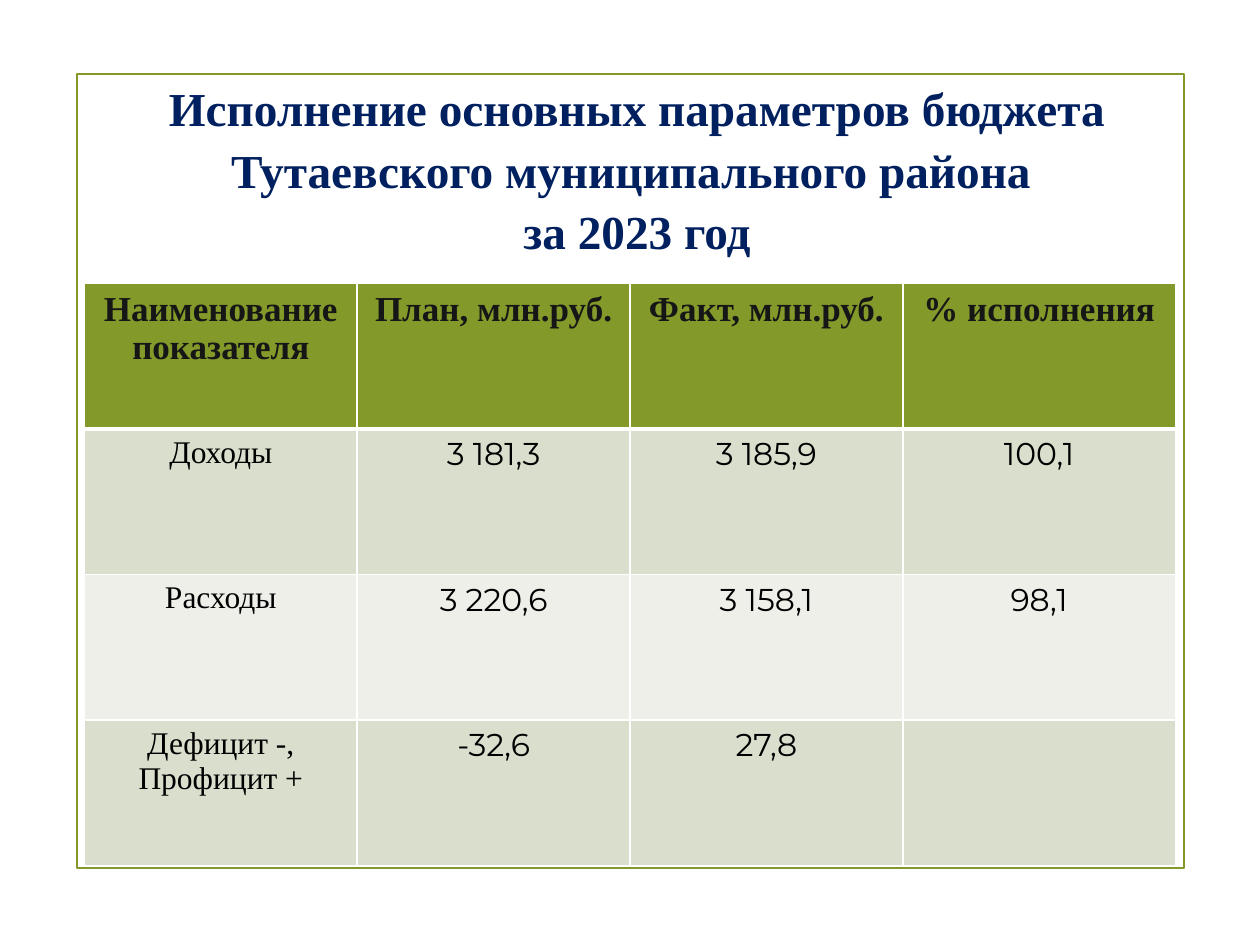
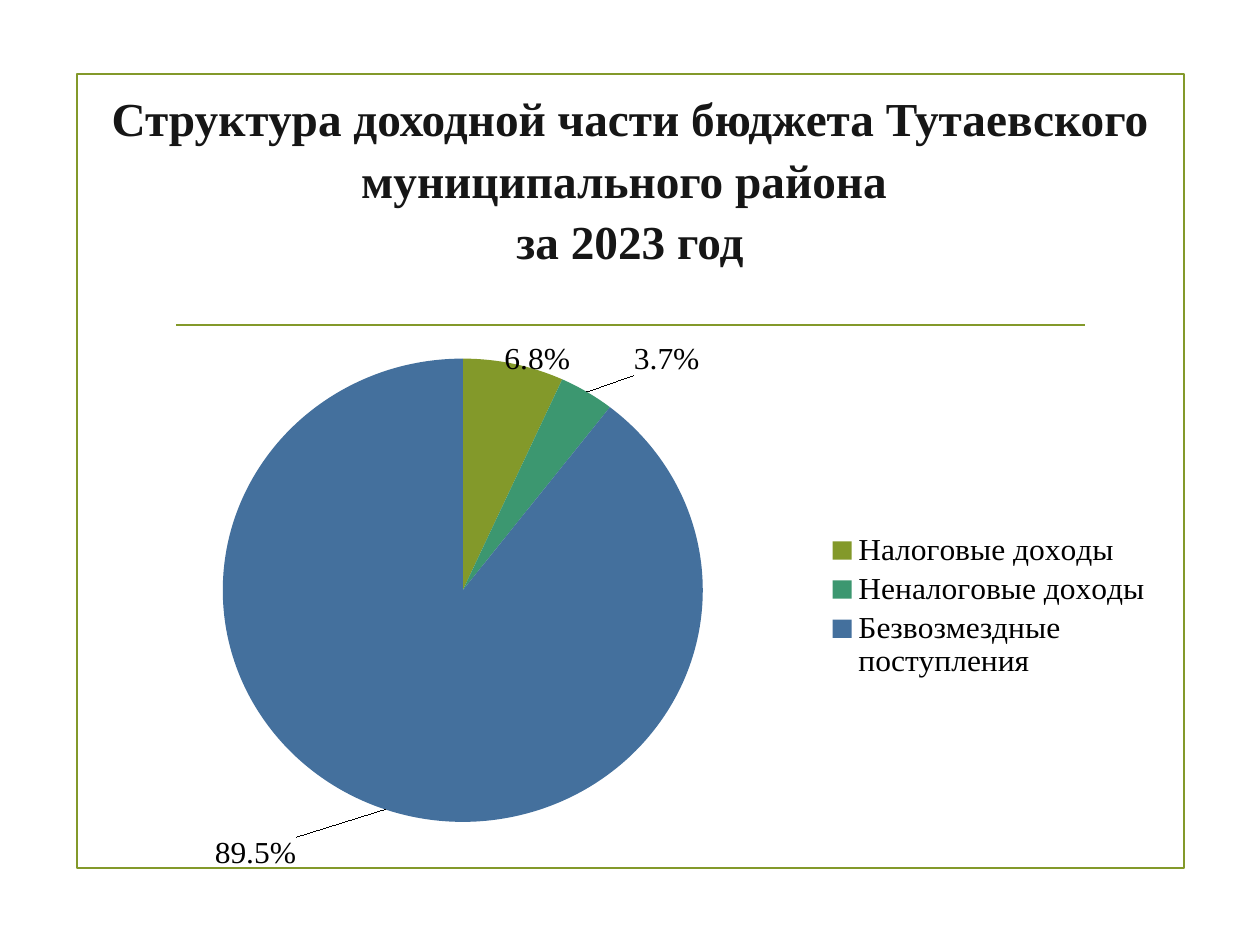
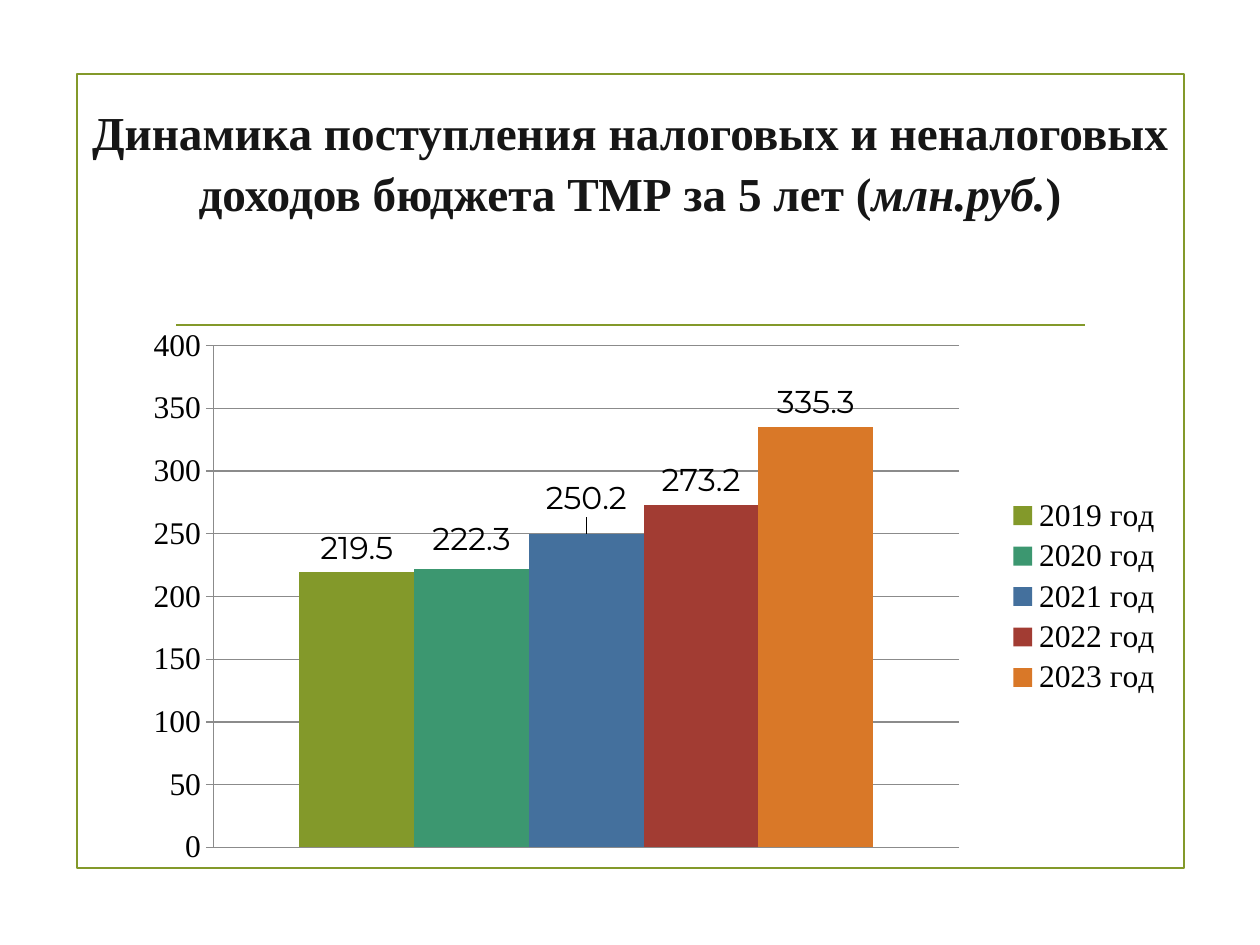
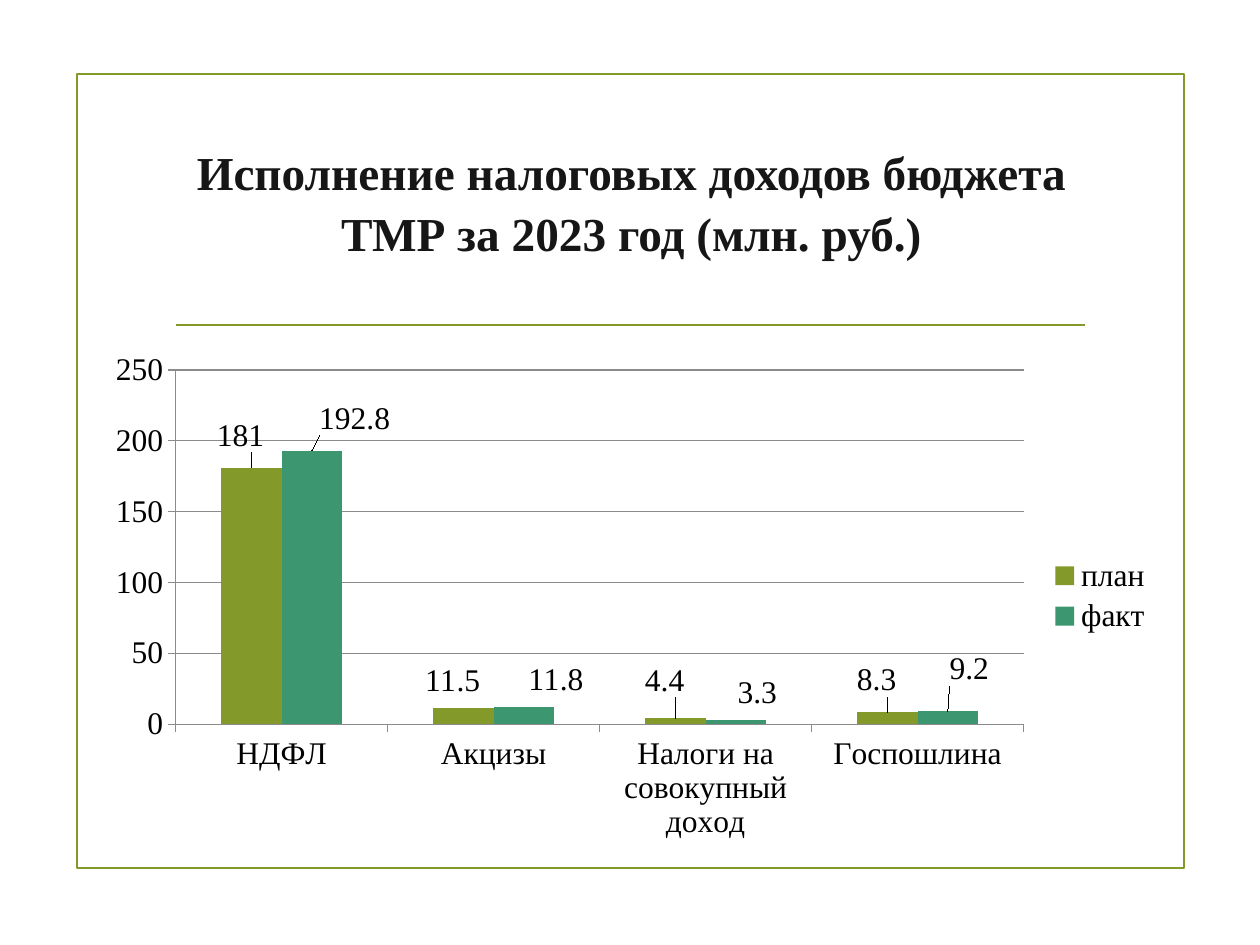
import lxml.etree
import pptx
import pptx.chart.data
import pptx.dml.color
import pptx.enum.chart
import pptx.enum.shapes
import pptx.enum.text
import pptx.oxml.ns
import pptx.util

Inches = pptx.util.Inches
Pt = pptx.util.Pt
qn = pptx.oxml.ns.qn
ChartType = pptx.enum.chart.XL_CHART_TYPE
LabelPosition = pptx.enum.chart.XL_LABEL_POSITION
SERIF, SANS = "Times New Roman", "Montserrat"
OLIVE, INK, NAVY, GRID, WHITE, BLACK = "83992A", "161616", "002060", "8B8B8B", "FFFFFF", "000000"
PALETTE = [OLIVE, "3C9770", "44709D", "A23C33", "D97828"]
BANDS = ["D9DECD", "EDEFE8"]


def color(value):
    return pptx.dml.color.RGBColor.from_string(value)


def assign(target, values):
    for name, value in values.items():
        setattr(target, name, value)


class Deck:
    """Hold the shared style and the current slide."""

    def __init__(self):
        self.presentation = pptx.Presentation()
        assign(self.presentation, {"slide_width": Inches(10), "slide_height": Inches(7.5)})
        self.slide = None

    def add_slide(self, divider=True):
        self.slide = self.presentation.slides.add_slide(self.presentation.slide_layouts[6])
        frame = self.slide.shapes.add_shape(
            pptx.enum.shapes.MSO_SHAPE.RECTANGLE, *map(Inches, (0.61, 0.59, 8.79, 6.3)))
        frame.shadow.inherit = False
        frame.fill.background()
        self.stroke(frame.line, OLIVE, 1.25)
        if divider:
            line = self.slide.shapes.add_connector(
                pptx.enum.shapes.MSO_CONNECTOR.STRAIGHT, *map(Inches, (1.4, 2.58, 8.61, 2.58)))
            self.stroke(line.line, OLIVE, 1.25)
            lxml.etree.SubElement(line._element.spPr, qn("a:effectLst"))

    def stroke(self, line, value, width):
        line.color.rgb = color(value)
        line.width = Pt(width)

    def style(self, font, value, **values):
        assign(font, {"name": SERIF, **values})
        font.color.rgb = color(value)

    def title(self, box, pieces, value=INK):
        frame = self.slide.shapes.add_textbox(*map(Inches, box)).text_frame
        assign(frame, {"word_wrap": True, "vertical_anchor": pptx.enum.text.MSO_ANCHOR.MIDDLE})
        paragraph = frame.paragraphs[0]
        assign(paragraph, {"alignment": pptx.enum.text.PP_ALIGN.CENTER, "line_spacing": 1.08})
        for text, italic in pieces:
            if text == "\n":
                paragraph.add_line_break()
                continue
            run = paragraph.add_run()
            run.text = text
            self.style(run.font, value, size=Pt(27), bold=True, italic=italic)

    def borders(self, cell, bottom):
        properties = cell._tc.get_or_add_tcPr()
        for side, width in (("L", 1), ("R", 1), ("T", 1), ("B", bottom)):
            line = lxml.etree.SubElement(properties, qn(f"a:ln{side}"), w=str(Pt(width)))
            fill = lxml.etree.SubElement(line, qn("a:solidFill"))
            lxml.etree.SubElement(fill, qn("a:srgbClr"), val=WHITE)

    def table(self, box, rows):
        table = self.slide.shapes.add_table(len(rows), len(rows[0]), *map(Inches, box)).table
        for row, texts in enumerate(rows):
            for column, text in enumerate(texts):
                cell = table.cell(row, column)
                header = row == 0
                self.borders(cell, 3 if header else 1)
                cell.fill.solid()
                cell.fill.fore_color.rgb = color(OLIVE if header else BANDS[(row - 1) % 2])
                assign(cell, {"margin_left": Inches(0.11), "margin_right": Inches(0.11)})
                cell.text = text
                for paragraph in cell.text_frame.paragraphs:
                    paragraph.alignment = pptx.enum.text.PP_ALIGN.CENTER
                    for run in paragraph.runs:
                        self.style(run.font, INK if header else BLACK, bold=header,
                                   size=Pt(20 if header else 18),
                                   name=SERIF if header or column == 0 else SANS)

    def chart(self, box, kind, categories, series, number_format="General", plot=None,
              label_font=SERIF, offsets=None):
        data = pptx.chart.data.CategoryChartData(number_format=number_format)
        data.categories = categories
        for name, values in series:
            data.add_series(name, values)
        chart = self.slide.shapes.add_chart(kind, *map(Inches, box), data).chart
        assign(chart, {"has_title": False, "has_legend": True})
        self.style(chart.font, BLACK, size=Pt(18))
        assign(chart.legend, {"position": pptx.enum.chart.XL_LEGEND_POSITION.RIGHT,
                              "include_in_layout": False})
        pie = kind == ChartType.PIE
        chart.plots[0].vary_by_categories = pie
        for number, item in enumerate(chart.plots[0].series):
            parts = [item.points[i] for i in range(len(categories))] if pie else [item]
            for index, part in enumerate(parts, number):
                part.format.fill.solid()
                part.format.fill.fore_color.rgb = color(PALETTE[index])
            self.labels(item, label_font, number_format, (offsets or {}).get(number, {}))
        if plot:
            self.layout(chart.element.xpath("c:chart/c:plotArea")[0], 0, plot, inner=True)
        return chart

    def labels(self, series, font, number_format, offsets):
        labels = series.data_labels
        assign(labels, {"show_value": True, "position": LabelPosition.OUTSIDE_END,
                        "number_format": number_format, "number_format_is_linked": False})
        self.style(labels.font, BLACK, size=Pt(18), name=font)
        for index, offset in offsets.items():
            label = series.points[index].data_label
            label.position = LabelPosition.OUTSIDE_END
            self.style(label.font, BLACK, size=Pt(18), name=font)
            element = series._element.xpath(f"c:dLbls/c:dLbl[c:idx/@val='{index}']")[0]
            self.layout(element, 1, offset)

    def layout(self, parent, position, values, inner=False):
        for old in parent.findall(qn("c:layout")):
            parent.remove(old)
        layout = lxml.etree.Element(qn("c:layout"))
        parent.insert(position, layout)
        manual = lxml.etree.SubElement(layout, qn("c:manualLayout"))
        settings = [("layoutTarget", "inner"), ("xMode", "edge"), ("yMode", "edge")] if inner else []
        for name, value in settings + list(zip("xywh", values)):
            lxml.etree.SubElement(manual, qn(f"c:{name}"), val=str(value))

    def pie(self, box, categories, values, **options):
        chart = self.chart(box, ChartType.PIE, categories, [("Series 1", values)], **options)
        labels = chart.element.xpath(".//c:ser/c:dLbls")[0]
        for old in labels.findall(qn("c:showLeaderLines")):
            labels.remove(old)
        lxml.etree.SubElement(labels, qn("c:showLeaderLines"), val="1")

    def columns(self, box, categories, series, show_categories=True, **options):
        chart = self.chart(box, ChartType.COLUMN_CLUSTERED, categories, series, **options)
        assign(chart.plots[0], {"gap_width": 150, "overlap": 0})
        assign(chart.value_axis, {"has_major_gridlines": True})
        self.stroke(chart.value_axis.major_gridlines.format.line, GRID, 0.75)
        for axis in (chart.category_axis, chart.value_axis):
            axis.major_tick_mark = pptx.enum.chart.XL_TICK_MARK.OUTSIDE
            self.stroke(axis.format.line, GRID, 0.75)
        chart.category_axis.visible = show_categories


def main():
    deck = Deck()

    deck.add_slide(divider=False)
    deck.title((0.5, 0.62, 9.11, 1.41), [
        ("Исполнение основных параметров бюджета Тутаевского муниципального района ", False),
        ("\n", False), ("за 2023 год", False)], NAVY)
    deck.table((0.67, 2.25, 8.66, 4.62), [
        ("Наименование показателя", "План, млн.руб.", "Факт, млн.руб.", "% исполнения"),
        ("Доходы", "3 181,3", "3 185,9", "100,1"),
        ("Расходы", "3 220,6", "3 158,1", "98,1"),
        ("Дефицит -,\nПрофицит +", "-32,6", "27,8", "")])

    deck.add_slide()
    deck.title((0.5, 0.7, 9, 1.41), [
        ("Структура доходной части бюджета Тутаевского муниципального района ", False),
        ("\n", False), ("за 2023 год", False)])
    deck.pie((0.67, 2.57, 8.58, 4.33),
             ["Налоговые доходы", "Неналоговые доходы", "Безвозмездные поступления"],
             [0.068, 0.037, 0.895], number_format="0.0%", plot=(0.05, 0.03, 0.6, 0.88),
             offsets={0: {0: (-0.01, 0.03), 1: (0.04, -0.02), 2: (-0.08, 0.04)}})

    deck.add_slide()
    deck.title((0.5, 0.6, 9, 1.34), [
        ("Динамика поступления налоговых и неналоговых доходов бюджета ТМР за 5 лет (", False),
        ("млн.руб.", True), (")", False)])
    income = [219.5, 222.3, 250.2, 273.2, 335.3]
    deck.columns((0.75, 2.57, 8.58, 4.33), ["1"],
                 [(f"{year} год", [value]) for year, value in enumerate(income, 2019)],
                 show_categories=False, plot=(0.11, 0.04, 0.69, 0.92), label_font=SANS,
                 offsets={1: {0: (0, -0.01)}, 2: {0: (0, -0.02)}})

    deck.add_slide()
    deck.title((1.29, 1, 7.44, 1.17), [
        ("Исполнение налоговых доходов бюджета ТМР за 2023 год (млн. руб.)", False)])
    deck.columns((0.75, 2.72, 8.5, 4.02),
                 ["НДФЛ", "Акцизы", "Налоги на совокупный доход", "Госпошлина"],
                 [("план", [181, 11.5, 4.4, 8.3]), ("факт", [192.8, 11.8, 3.3, 9.2])],
                 offsets={0: dict(enumerate([(-0.01, -0.02), (-0.01, -0.01),
                                             (-0.01, -0.03), (-0.01, -0.02)])),
                          1: dict(enumerate([(0.04, -0.02), (0.03, -0.01),
                                             (0.02, -0.01), (0.02, -0.04)]))})

    deck.presentation.save("out.pptx")


if __name__ == "__main__":
    main()
